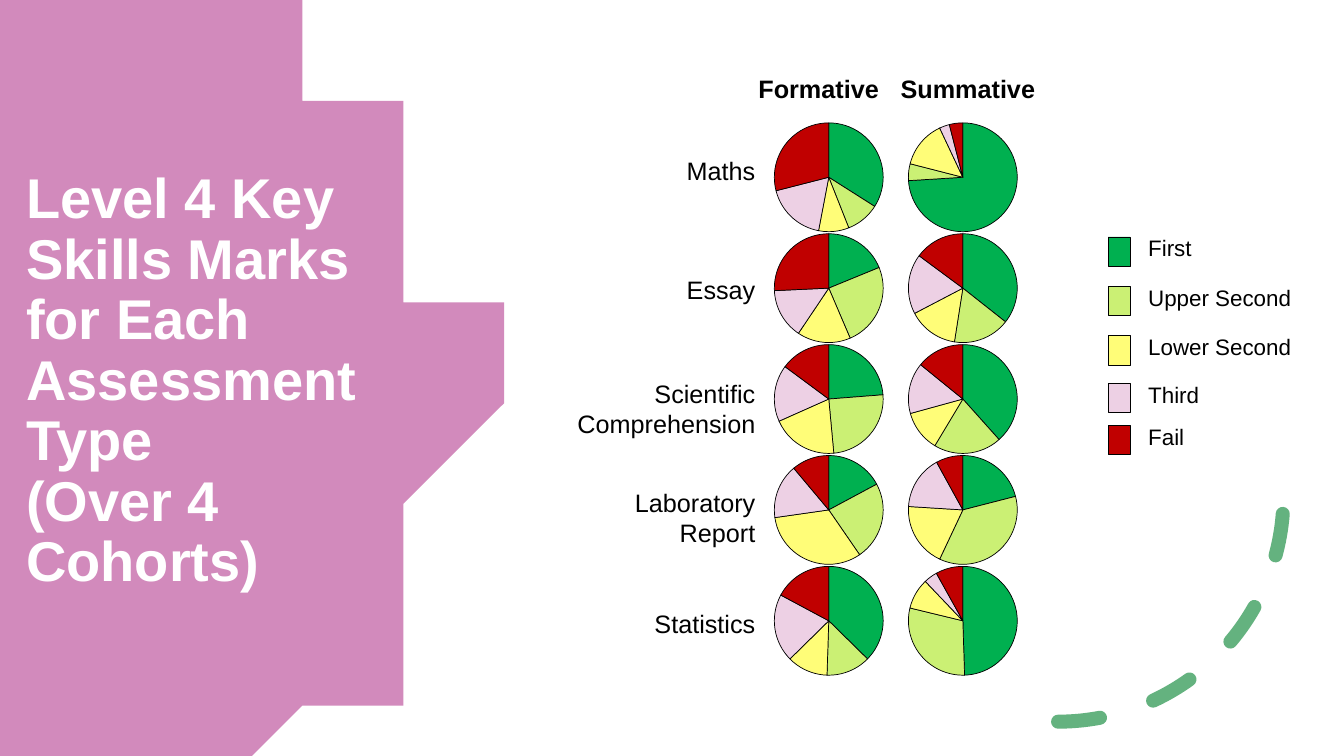
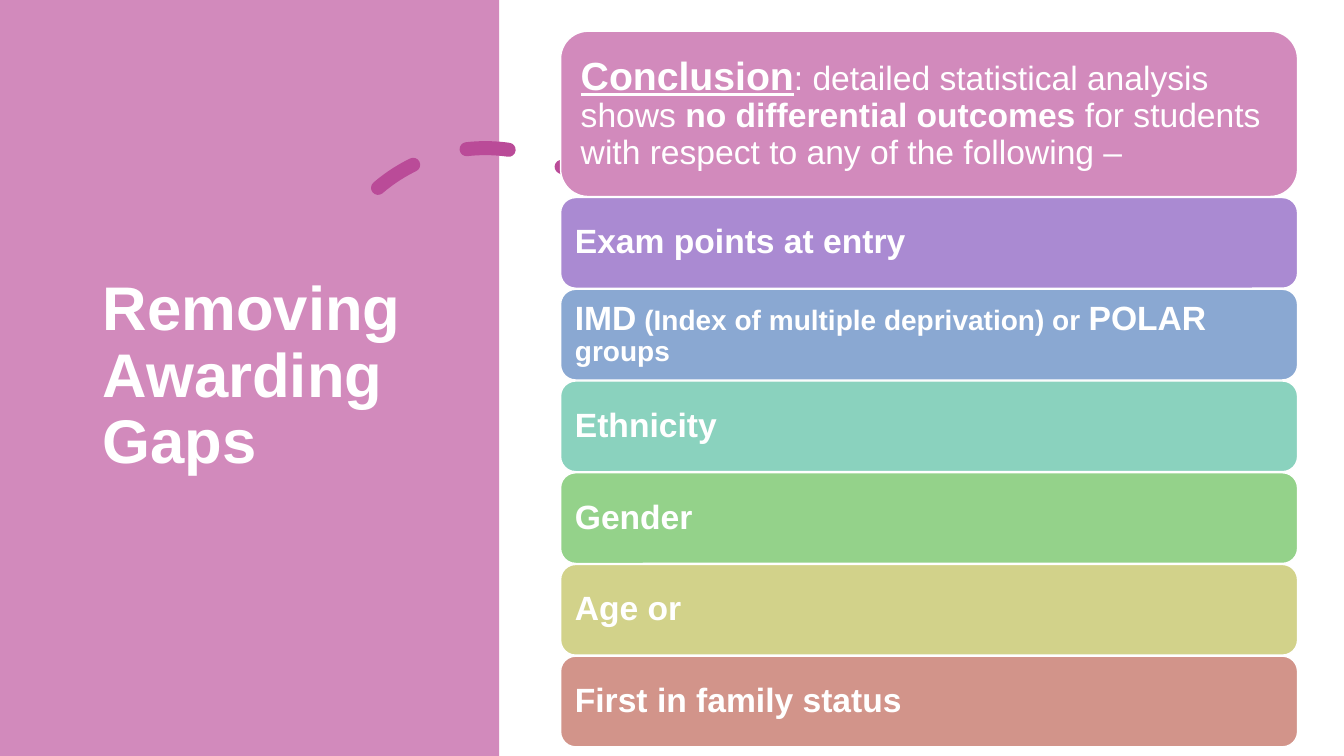
from dataclasses import dataclass
from math import asin, cos, sin

from lxml.etree import SubElement
from pptx import Presentation
from pptx.chart.data import CategoryChartData
from pptx.dml.color import RGBColor
from pptx.enum.chart import XL_CHART_TYPE
from pptx.enum.dml import MSO_LINE
from pptx.enum.shapes import MSO_SHAPE
from pptx.enum.text import MSO_ANCHOR, MSO_AUTO_SIZE, PP_ALIGN
from pptx.oxml import parse_xml
from pptx.oxml.ns import nsdecls, qn
from pptx.util import Inches, Pt


@dataclass(frozen=True)
class Theme:
    font: str = "Arial"
    white: str = "FFFFFF"
    black: str = "000000"
    pink: str = "D28ABC"
    magenta: str = "BA4B98"
    green: str = "64B27F"
    chart_size: int = 10
    legend_size: int = 16
    label_size: int = 18
    minor_size: int = 20
    card_size: int = 24
    lead_size: int = 28
    outline: float = 0.5


T = Theme()
SLIDE_W, SLIDE_H = 13.33, 7.5

# Name, colour, swatch top
GRADES = [
    ("First", "00B050", 2.35),
    ("Upper Second", "CBF074", 2.84),
    ("Lower Second", "FFFD78", 3.33),
    ("Third", "EDD0E4", 3.8),
    ("Fail", "C00000", 4.22),
]
# Name, label centre, formative marks, summative marks
ASSESSMENTS = [
    ("Maths", 1.69, (34, 10, 9, 18, 29), (74, 5, 14, 3, 4)),
    ("Essay", 2.87, (19, 25, 16, 15, 26), (36, 17, 15, 18, 15)),
    ("Scientific\nComprehension", 4.05, (24, 25, 20, 17, 15), (38, 20, 12, 15, 14)),
    ("Laboratory\nReport", 5.13, (17, 23, 32, 16, 11), (21, 36, 19, 16, 8)),
    ("Statistics", 6.18, (37, 13, 12, 20, 17), (49, 29, 9, 4, 8)),
]
# Name, header centre, chart left
COLUMNS = [("Formative", 8.12, 7.32), ("Summative", 9.6, 8.65)]

# Runs are (text, size, bold, underlined)
CONCLUSION = [
    ("Conclusion", T.lead_size, True, True),
    (": detailed statistical analysis shows ", T.card_size, False, False),
    ("no differential outcomes ", T.card_size, True, False),
    ("for students with respect to any of the following –", T.card_size, False, False),
]
DEPRIVATION = [
    ("IMD", T.card_size, True, False),
    (" (Index of multiple deprivation) or ", T.minor_size, True, False),
    ("POLAR ", T.card_size, True, False),
    ("groups", T.minor_size, True, False),
]
FACTORS = [
    ([("Exam points at entry", T.card_size, True, False)], "AA8AD2"),
    (DEPRIVATION, "8AA8D2"),
    ([("Ethnicity", T.card_size, True, False)], "8AD2BE"),
    ([("Gender", T.card_size, True, False)], "94D28A"),
    ([("Age or", T.card_size, True, False)], "D2D28A"),
    ([("First in family status", T.card_size, True, False)], "D2948A"),
]


def rgb(colour):
    return RGBColor.from_string(colour)


def inches(*lengths):
    return [Inches(length) for length in lengths]


def set_font(font, size, colour, bold=False, underline=False):
    font.name, font.size = T.font, Pt(size)
    font.bold, font.underline = bold, underline
    font.color.rgb = rgb(colour)


def paint(sp, fill, line=None, width=T.outline):
    sp.shadow.inherit = False
    sp.fill.solid()
    sp.fill.fore_color.rgb = rgb(fill)
    if line:
        sp.line.color.rgb = rgb(line)
        sp.line.width = Pt(width)
    else:
        sp.line.fill.background()


def add_box(s, kind, box, fill, line=None, width=T.outline):
    sp = s.shapes.add_shape(kind, *inches(*box))
    paint(sp, fill, line, width)
    return sp


def send_to_back(s, sp):
    s.shapes.element.insert(2, sp.element)


def set_title(s, text, box, size):
    title = s.shapes.title
    title.left, title.top, title.width, title.height = inches(*box)
    tf = title.text_frame
    tf.text = text
    tf.word_wrap = True
    tf.auto_size = MSO_AUTO_SIZE.NONE
    tf.vertical_anchor = MSO_ANCHOR.MIDDLE
    p = tf.paragraphs[0]
    p.alignment, p.line_spacing = PP_ALIGN.LEFT, 0.9
    set_font(p.font, size, T.white, bold=True)


def add_text(s, text, box, size, align=PP_ALIGN.LEFT, bold=False):
    tf = s.shapes.add_textbox(*inches(*box)).text_frame
    tf.text = text
    tf.word_wrap = True
    tf.vertical_anchor = MSO_ANCHOR.MIDDLE
    for p in tf.paragraphs:
        p.alignment = align
        set_font(p.font, size, T.black, bold)


def add_round_panel(s, radius, right):
    """Fill the left of the slide up to an arc centred on its mid-height."""
    middle = SLIDE_H / 2
    half_angle, steps = asin(middle / radius), 80
    angles = [half_angle * (2 * i / steps - 1) for i in range(steps + 1)]
    edge = [(right - radius + radius * cos(a), middle + radius * sin(a)) for a in angles]
    builder = s.shapes.build_freeform(0, 0, scale=Inches(1))
    builder.add_line_segments(edge + [(0, SLIDE_H)], close=True)
    panel = builder.convert_to_shape()
    paint(panel, T.pink)
    send_to_back(s, panel)


def add_dashed_arc(s, box, colour):
    arc = s.shapes.add_shape(MSO_SHAPE.ARC, *inches(*box))
    arc.shadow.inherit = False
    arc.fill.background()
    arc.line.color.rgb = rgb(colour)
    arc.line.width = Pt(10)
    arc.line.dash_style = MSO_LINE.DASH
    arc.element.spPr.find(qn("a:ln")).set("cap", "rnd")
    return arc


def fix_plot_layout(chart, x, y, w, h):
    """Place the plot area by fractions of the chart frame."""
    plot_area = chart.element.find(".//" + qn("c:plotArea"))
    for old in plot_area.findall(qn("c:layout")):
        plot_area.remove(old)
    layout = parse_xml(f"<c:layout {nsdecls('c')}/>")
    manual = SubElement(layout, qn("c:manualLayout"))
    settings = [("layoutTarget", "inner"), ("xMode", "edge"), ("yMode", "edge"),
                ("x", x), ("y", y), ("w", w), ("h", h)]
    for tag, value in settings:
        SubElement(manual, qn("c:" + tag)).set("val", str(value))
    plot_area.insert(0, layout)


def add_pie(s, box, marks):
    data = CategoryChartData()
    data.categories = ["1", "2", "3", "4", "5"]
    data.add_series("Series 1", marks)
    chart = s.shapes.add_chart(XL_CHART_TYPE.PIE, *inches(*box), data).chart
    chart.has_legend = chart.has_title = False
    set_font(chart.font, T.chart_size, T.black)
    fix_plot_layout(chart, 0.2, 0.1, 0.6, 0.8)
    series = chart.plots[0].series[0]
    for i, (_, colour, _) in enumerate(GRADES):
        fmt = series.points[i].format
        fmt.fill.solid()
        fmt.fill.fore_color.rgb = rgb(colour)
        fmt.line.color.rgb = rgb(T.black)
        fmt.line.width = Pt(T.outline)


def add_card(s, runs, top, height, fill, inset):
    card = add_box(s, MSO_SHAPE.ROUNDED_RECTANGLE, (5.56, top, 7.31, height),
                   fill, T.white, 1)
    tf = card.text_frame
    tf.word_wrap = True
    tf.vertical_anchor = MSO_ANCHOR.MIDDLE
    tf.margin_left = tf.margin_right = tf.margin_top = tf.margin_bottom = Inches(inset)
    p = tf.paragraphs[0]
    p.alignment, p.line_spacing = PP_ALIGN.LEFT, 0.9
    for text, size, bold, underline in runs:
        r = p.add_run()
        r.text = text
        set_font(r.font, size, T.white, bold, underline)


def add_legend(s):
    for name, colour, top in GRADES:
        add_box(s, MSO_SHAPE.RECTANGLE, (10.99, top, 0.22, 0.29), colour, T.black)
        add_text(s, name, (11.29, top - 0.09, 1.8, 0.4), T.legend_size)


def build_marks_slide(s):
    add_round_panel(s, radius=4.41, right=4.56)
    set_title(s, "Level 4 Key Skills Marks for Each Assessment Type\v(Over 4 Cohorts)",
              (0.16, 1.35, 3.93, 4.88), 40)
    arc = add_dashed_arc(s, (8.26, 2.69, 4.47, 4.47), T.green)
    arc.element.spPr.find(qn("a:xfrm")).set("flipV", "1")
    for name, centre, _ in COLUMNS:
        add_text(s, name, (centre - 0.82, 0.66, 1.64, 0.44), T.label_size,
                 PP_ALIGN.CENTER, bold=True)
    for row, (name, centre, *marks) in enumerate(ASSESSMENTS):
        add_text(s, name, (5.49, centre - 0.39, 2.1, 0.78), T.label_size, PP_ALIGN.RIGHT)
        for (_, _, left), values in zip(COLUMNS, marks):
            add_pie(s, (left, 1.08 + 1.1 * row, 1.8, 1.36), values)
    add_legend(s)


def build_gaps_slide(s):
    panel = add_box(s, MSO_SHAPE.RECTANGLE, (0, 0, 4.95, SLIDE_H), T.pink)
    send_to_back(s, panel)
    set_title(s, "Removing Awarding Gaps", (0.92, 0.7, 3.23, 6.09), 44)
    arc = add_dashed_arc(s, (3.18, 1.47, 3.27, 3.27), T.magenta)
    arc.rotation = 345.8
    arc.adjustments[0] = 146.13
    add_card(s, CONCLUSION, 0.31, 1.64, T.pink, 0.12)
    for i, (runs, fill) in enumerate(FACTORS):
        add_card(s, runs, 1.96 + 0.91 * i, 0.9, fill, 0.1)


def main():
    prs = Presentation()
    prs.slide_width, prs.slide_height = inches(SLIDE_W, SLIDE_H)
    title_only = prs.slide_layouts[5]
    for build in (build_marks_slide, build_gaps_slide):
        build(prs.slides.add_slide(title_only))
    prs.save("out.pptx")


if __name__ == "__main__":
    main()
